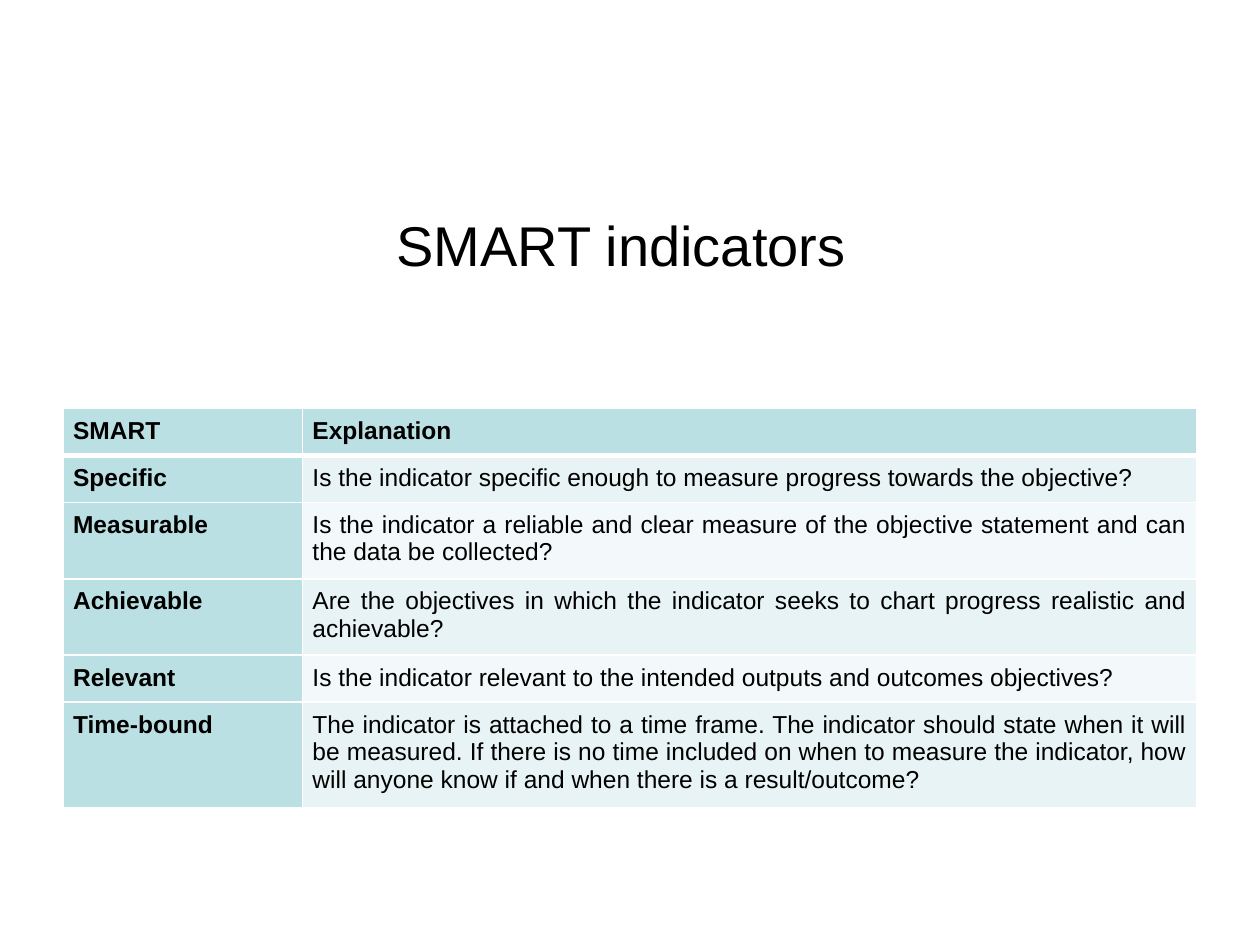
from dataclasses import dataclass

from lxml.etree import SubElement
from pptx import Presentation
from pptx.dml.color import RGBColor
from pptx.enum.text import MSO_ANCHOR, PP_ALIGN
from pptx.oxml.ns import qn
from pptx.util import Inches, Pt


@dataclass(frozen=True)
class Theme:
    font: str = "Arial"
    title_size: int = 32
    table_size: int = 14
    text: str = "000000"
    border: str = "FFFFFF"
    heading_fill: str = "BBE0E3"
    band_fills: tuple = ("E7F3F4", "F3F9FA")
    thin_border: int = 1
    thick_border: int = 3


COLUMN_WIDTHS = (1.9, 7.1)
ONE_LINE, TWO_LINES, THREE_LINES = 0.37, 0.6, 0.81
ROWS = [
    ("SMART", "Explanation", ONE_LINE),
    ("Specific", "Is the indicator specific enough to measure progress "
     "towards the objective?", ONE_LINE),
    ("Measurable", "Is the indicator a reliable and clear measure of the "
     "objective statement and can the data be collected?", TWO_LINES),
    ("Achievable", "Are the objectives in which the indicator seeks to chart "
     "progress realistic and achievable?", TWO_LINES),
    ("Relevant", "Is the indicator relevant to the intended outputs and "
     "outcomes objectives?", ONE_LINE),
    ("Time-bound", "The indicator is attached to a time frame. The indicator "
     "should state when it will be measured. If there is no time included on "
     "when to measure the indicator, how will anyone know if and when there "
     "is a result/outcome?", THREE_LINES),
]


class SlideBuilder:
    def __init__(self, slide, theme):
        self.slide = slide
        self.theme = theme

    def add_text(self, frame, text, size, alignment, bold=False):
        paragraph = frame.paragraphs[0]
        paragraph.alignment = alignment
        run = paragraph.add_run()
        run.text = text
        formats = {"name": self.theme.font, "size": Pt(size), "bold": bold}
        for name, value in formats.items():
            setattr(run.font, name, value)
        run.font.color.rgb = RGBColor.from_string(self.theme.text)

    def title(self, text, left, top, width, height):
        box = self.slide.shapes.add_textbox(
            Inches(left), Inches(top), Inches(width), Inches(height))
        frame = box.text_frame
        frame.word_wrap = True
        frame.vertical_anchor = MSO_ANCHOR.MIDDLE
        self.add_text(frame, text, self.theme.title_size, PP_ALIGN.CENTER)

    def border(self, cell, side, width):
        properties = cell._tc.get_or_add_tcPr()
        line = SubElement(properties, qn(f"a:ln{side}"), w=str(Pt(width)))
        fill = SubElement(line, qn("a:solidFill"))
        SubElement(fill, qn("a:srgbClr"), val=self.theme.border)

    def cell(self, cell, text, row, column):
        theme = self.theme
        heading = row == 0 or column == 0
        margins = {"margin_left": 0.08, "margin_right": 0.08,
                   "margin_top": 0.07, "margin_bottom": 0.07}
        for name, value in margins.items():
            setattr(cell, name, Inches(value))
        # The line under the header row is thicker than the others
        thick_side = {0: "B", 1: "T"}.get(row)
        for side in "LRTB":
            thick = side == thick_side
            self.border(cell, side,
                        theme.thick_border if thick else theme.thin_border)
        color = theme.heading_fill if heading else theme.band_fills[(row - 1) % 2]
        cell.fill.solid()
        cell.fill.fore_color.rgb = RGBColor.from_string(color)
        self.add_text(cell.text_frame, text, theme.table_size,
                      PP_ALIGN.JUSTIFY, heading)

    def table(self, rows, column_widths, left, top):
        height = sum(row_height for *_, row_height in rows)
        table = self.slide.shapes.add_table(
            len(rows), len(column_widths), Inches(left), Inches(top),
            Inches(sum(column_widths)), Inches(height)).table
        for column, width in zip(table.columns, column_widths):
            column.width = Inches(width)
        for row, (*texts, row_height) in enumerate(rows):
            table.rows[row].height = Inches(row_height)
            for column, text in enumerate(texts):
                self.cell(table.cell(row, column), text, row, column)


def main():
    presentation = Presentation()
    presentation.slide_width = Inches(10)
    presentation.slide_height = Inches(7.5)
    slide = presentation.slides.add_slide(presentation.slide_layouts[6])
    builder = SlideBuilder(slide, Theme())

    # Title
    builder.title("SMART indicators", 0.43, 1.31, 9, 1.25)

    # Criteria and their explanations
    builder.table(ROWS, COLUMN_WIDTHS, 0.5, 3.24)

    presentation.save("out.pptx")


if __name__ == "__main__":
    main()
